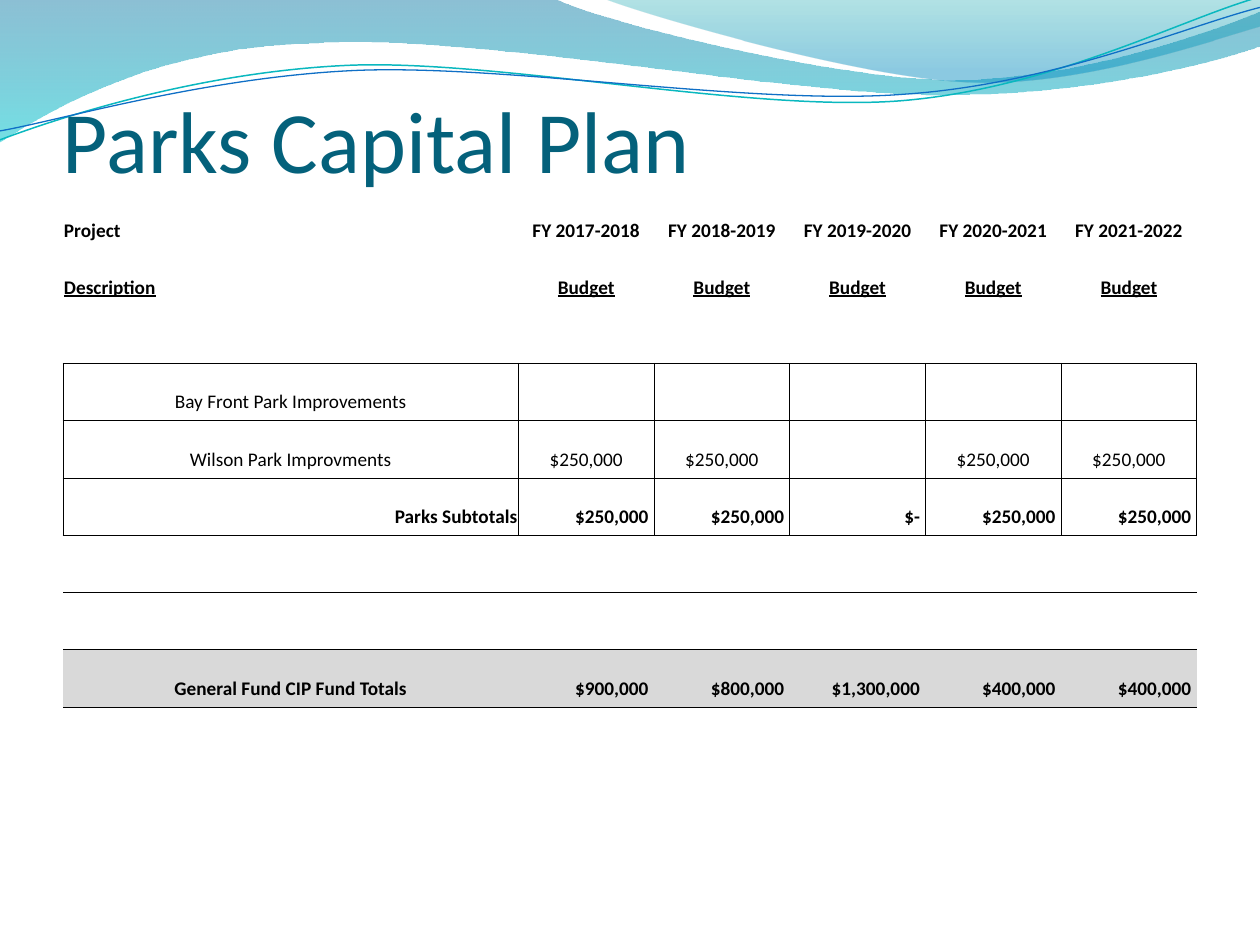
import pptx
import pptx.util
import pptx.dml.color
import pptx.enum.text
from lxml import etree

Cm, Pt = pptx.util.Cm, pptx.util.Pt
RGBColor = pptx.dml.color.RGBColor
ALIGN = pptx.enum.text.PP_ALIGN
ANCHOR = pptx.enum.text.MSO_ANCHOR
NS = "http://schemas.openxmlformats.org/drawingml/2006/main"

BLACK = RGBColor(0x00, 0x00, 0x00)
WHITE = RGBColor(0xFF, 0xFF, 0xFF)
GREY = RGBColor(0xD9, 0xD9, 0xD9)
NAVY = RGBColor(0x04, 0x61, 0x7B)
STEEL = RGBColor(0x00, 0x74, 0xA1)
AQUA = RGBColor(0x00, 0xC6, 0xCF)
TEAL = RGBColor(0x00, 0xA1, 0xA9)
SKY = RGBColor(0x00, 0x8B, 0xBF)
CYAN = RGBColor(0x0A, 0xB8, 0xBF)
BLUE = RGBColor(0x0F, 0x6F, 0xC6)

TITLE = "Parks Capital Plan"
FONT = "Calibri"
WIDE, FIRST = 22.86, 9.18
TILT = 357.3

BANDS = [
    ([(0, 0), (11.18, -0.03),
      (12.09, 0.43, 16.87, 1.6, 19.25, 1.6),
      (21.67, 1.6, 24.33, 0.66, 25.4, 0.23),
      (25.43, 0.91),
      (24.97, 1.12, 22.1, 1.93, 18.95, 1.91),
      (15.8, 1.91, 9.7, 0.71, 6.53, 0.86),
      (3.25, 0.91, 1.17, 2.11, -0.03, 2.87)],
     [(0, STEEL, 45), (1, AQUA, 55)]),
    ([(12.17, -0.03),
      (12.93, 0.28, 17.32, 1.57, 19.53, 1.65),
      (21.74, 1.75, 24.41, 0.81, 25.4, 0.53),
      (25.4, 0)],
     [(0, TEAL, 30), (0.8, SKY, 45)]),
]
WAVES = [
    ([(-0.05, 2.22),
      (1.19, 1.82, 4.02, 1.04, 7.05, 1.05),
      (10.05, 1.07, 15.02, 2.37, 18.08, 2.29),
      (21.13, 2.2, 23.86, 0.91, 25.41, 0.55)], CYAN, 0.85),
    ([(-0.04, 2.04),
      (1.16, 1.89, 4.17, 1.15, 7.2, 1.16),
      (10.25, 1.18, 15.13, 2.25, 18.19, 2.16),
      (21.22, 2.1, 23.93, 1.06, 25.45, 0.75)], BLUE, 0.75),
]

YEARS = ["FY 2017-2018", "FY 2018-2019", "FY 2019-2020",
         "FY 2020-2021", "FY 2021-2022"]
HEAD = dict(bold=True, first=ALIGN.LEFT)
ITEM = dict(fill=WHITE, edges="LRTB")
SUM = dict(bold=True, rest=ALIGN.RIGHT)
ROWS = [
    (["Project"] + YEARS, HEAD),
    (["Description"] + ["Budget"] * 5, dict(HEAD, under=True)),
    ([""] * 6, dict(edges="B")),
    (["Bay Front Park Improvements"] + [""] * 5, ITEM),
    (["Wilson Park Improvments", "$250,000", "$250,000", "",
      "$250,000", "$250,000"], ITEM),
    (["Parks Subtotals", "$250,000", "$250,000", "$-",
      "$250,000", "$250,000"],
     dict(SUM, first=ALIGN.RIGHT, edges="LRTB")),
    ([""] * 6, dict(edges="T")),
    ([""] * 6, dict(edges="B")),
    (["General Fund CIP Fund Totals", "$900,000", "$800,000",
      "$1,300,000", "$400,000", "$400,000"],
     dict(SUM, fill=GREY, edges="TB")),
]


def draw(slide, parts, close):
    dots = [(Cm(p[n]), Cm(p[n + 1]))
            for p in parts for n in range(0, len(p), 2)]
    pen = slide.shapes.build_freeform(*dots[0])
    pen.add_line_segments(dots[1:], close=close)
    shape = pen.convert_to_shape()
    shape.shadow.inherit = False
    lines = iter(list(shape._element.iter(f"{{{NS}}}lnTo")))
    for part in parts[1:]:
        line = next(lines)
        if len(part) == 6:
            line.addprevious(curve := etree.Element(f"{{{NS}}}cubicBezTo"))
            for step in (line, next(lines), next(lines)):
                curve.append(step[0])
                step.getparent().remove(step)
    return shape


def add_band(slide, parts, stops):
    shape = draw(slide, parts, True)
    shape.line.fill.background()
    shape.fill.gradient()
    shape.fill.gradient_angle = 270
    for stop, (pos, color, alpha) in zip(shape.fill.gradient_stops, stops):
        stop.position = pos
        stop.color.rgb = color
    tints = shape._element.spPr.iter(f"{{{NS}}}srgbClr")
    for tint, (pos, color, alpha) in zip(tints, stops):
        etree.SubElement(tint, f"{{{NS}}}alpha", val=str(alpha * 1000))


def add_wave(slide, parts, color, width):
    shape = draw(slide, parts, False)
    shape.rotation = TILT
    shape.fill.background()
    shape.line.color.rgb = color
    shape.line.width = Pt(width)


def add_run(para, text, size, color, bold=False, under=False):
    run = para.add_run()
    run.text = text
    font = run.font
    font.name, font.size, font.bold = FONT, Pt(size), bold
    font.underline = under
    font.color.rgb = color


def add_title(slide):
    box = slide.shapes.add_textbox(Cm(1.27), Cm(1.47), Cm(WIDE), Cm(2.39))
    frame = box.text_frame
    frame.word_wrap = True
    frame.vertical_anchor = ANCHOR.BOTTOM
    frame.margin_left = frame.margin_right = frame.margin_bottom = 0
    frame.margin_top = Cm(0.13)
    add_run(frame.paragraphs[0], TITLE, 50, NAVY)


def set_edges(cell, edges):
    props = cell._tc.get_or_add_tcPr()
    for n, side in enumerate(edges):
        line = etree.Element(f"{{{NS}}}ln{side}", w=str(Pt(0.5)))
        paint = etree.SubElement(line, f"{{{NS}}}solidFill")
        etree.SubElement(paint, f"{{{NS}}}srgbClr", val=str(BLACK))
        props.insert(n, line)


def set_cell(cell, text, align, pad, look):
    cell.vertical_anchor = ANCHOR.BOTTOM
    cell.margin_left = cell.margin_top = Cm(0.02)
    cell.margin_right, cell.margin_bottom = Cm(pad), Cm(0.13)
    if "fill" in look:
        cell.fill.solid()
        cell.fill.fore_color.rgb = look["fill"]
    else:
        cell.fill.background()
    set_edges(cell, look.get("edges", ""))
    para = cell.text_frame.paragraphs[0]
    para.alignment = align
    if text:
        add_run(para, text, 11, BLACK, look.get("bold", False),
                look.get("under", False))


def add_grid(slide):
    frame = slide.shapes.add_table(len(ROWS), 6, Cm(1.27), Cm(3.86),
                                   Cm(WIDE), Cm(10.4))
    table = frame.table
    table.first_row = table.horz_banding = False
    style = table._tbl.tblPr.find(f"{{{NS}}}tableStyleId")
    style.text = "{2D5ABB26-0587-4C30-8999-92F81FD0307C}"
    for n, col in enumerate(table.columns):
        col.width = Cm((WIDE - FIRST) / 5 if n else FIRST)
    for r, (texts, look) in enumerate(ROWS):
        for c, text in enumerate(texts):
            align = look.get("rest" if c else "first", ALIGN.CENTER)
            pad = 0.11 if c and align == ALIGN.RIGHT else 0.02
            set_cell(table.cell(r, c), text, align, pad, look)


def main():
    deck = pptx.Presentation()
    deck.slide_width, deck.slide_height = Cm(25.4), Cm(19.05)
    slide = deck.slides.add_slide(deck.slide_layouts[6])
    for band in BANDS:
        add_band(slide, *band)
    for wave in WAVES:
        add_wave(slide, *wave)
    add_title(slide)
    add_grid(slide)
    deck.save("out.pptx")


if __name__ == "__main__":
    main()
